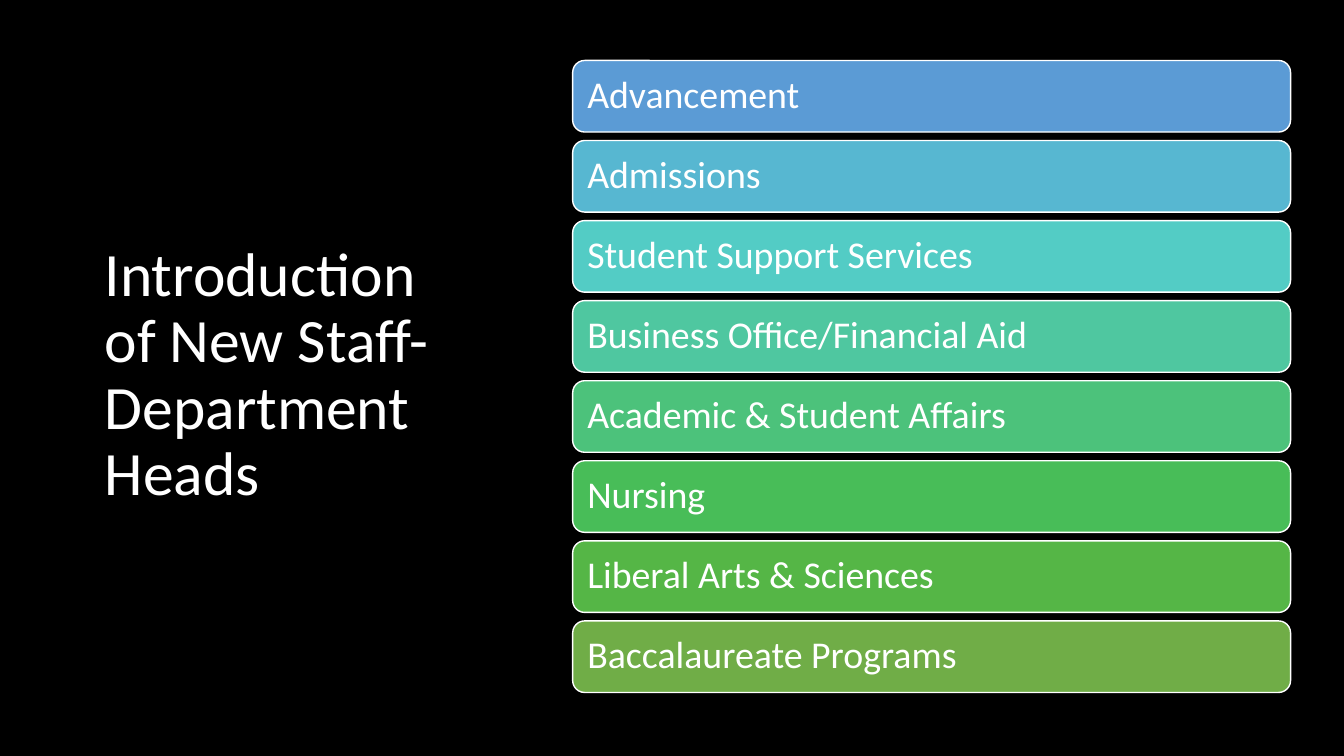
from pptx import Presentation
from pptx import util as u
from pptx.dml import color
from pptx.enum import shapes, text

COLORS = {
    "background": "000000",
    "ink": "FFFFFF",
    "Advancement": "5B9BD5",
    "Admissions": "57B7D1",
    "Student Support Services": "53CCC5",
    "Business Office/Financial Aid": "4FC7A0",
    "Academic & Student Affairs": "4CC27B",
    "Nursing": "48BD58",
    "Liberal Arts & Sciences": "55B646",
    "Baccalaureate Programs": "70AD47",
}
DEPARTMENTS = [name for name in COLORS if name not in ("background", "ink")]
FIRST_TOP, LAST_TOP = 0.6, 6.16


class StaffSlide:
    """Hold the slide and its style, and draw each kind of element."""

    font = "Calibri"

    def __init__(self, deck):
        self.slide = deck.slides.add_slide(deck.slide_layouts[6])
        self.paint(self.slide.background.fill, "background")

    def paint(self, fill, color_name):
        fill.solid()
        fill.fore_color.rgb = color.RGBColor.from_string(COLORS[color_name])

    def label(self, frame, wording, size):
        frame.word_wrap = True
        frame.vertical_anchor = text.MSO_ANCHOR.MIDDLE
        frame.text = wording
        line = frame.paragraphs[0]
        line.alignment = text.PP_ALIGN.LEFT
        line.line_spacing = 0.9
        font = line.runs[0].font
        font.name, font.size = self.font, u.Pt(size)
        self.paint(font.fill, "ink")

    def title(self, wording, *box):
        heading = self.slide.shapes.add_textbox(*map(u.Inches, box))
        self.label(heading.text_frame, wording, 44)

    def bar(self, department, *box):
        bar = self.slide.shapes.add_shape(
            shapes.MSO_SHAPE.ROUNDED_RECTANGLE, *map(u.Inches, box))
        bar.shadow.inherit = False
        self.paint(bar.fill, department)
        self.paint(bar.line.fill, "ink")
        bar.line.width = u.Pt(1)
        frame = bar.text_frame
        frame.margin_left = frame.margin_right = u.Inches(0.11)
        frame.margin_top = frame.margin_bottom = u.Inches(0.11)
        self.label(frame, department, 27)


def main():
    deck = Presentation()
    deck.slide_width, deck.slide_height = u.Inches(13.33), u.Inches(7.5)
    staff = StaffSlide(deck)
    staff.title("Introduction of New Staff-Department Heads", 0.94, 1.11, 3.74, 5.24)
    pitch = (LAST_TOP - FIRST_TOP) / (len(DEPARTMENTS) - 1)
    for row, department in enumerate(DEPARTMENTS):
        staff.bar(department, 5.68, FIRST_TOP + row * pitch, 7.12, 0.71)
    deck.save("out.pptx")


if __name__ == "__main__":
    main()
